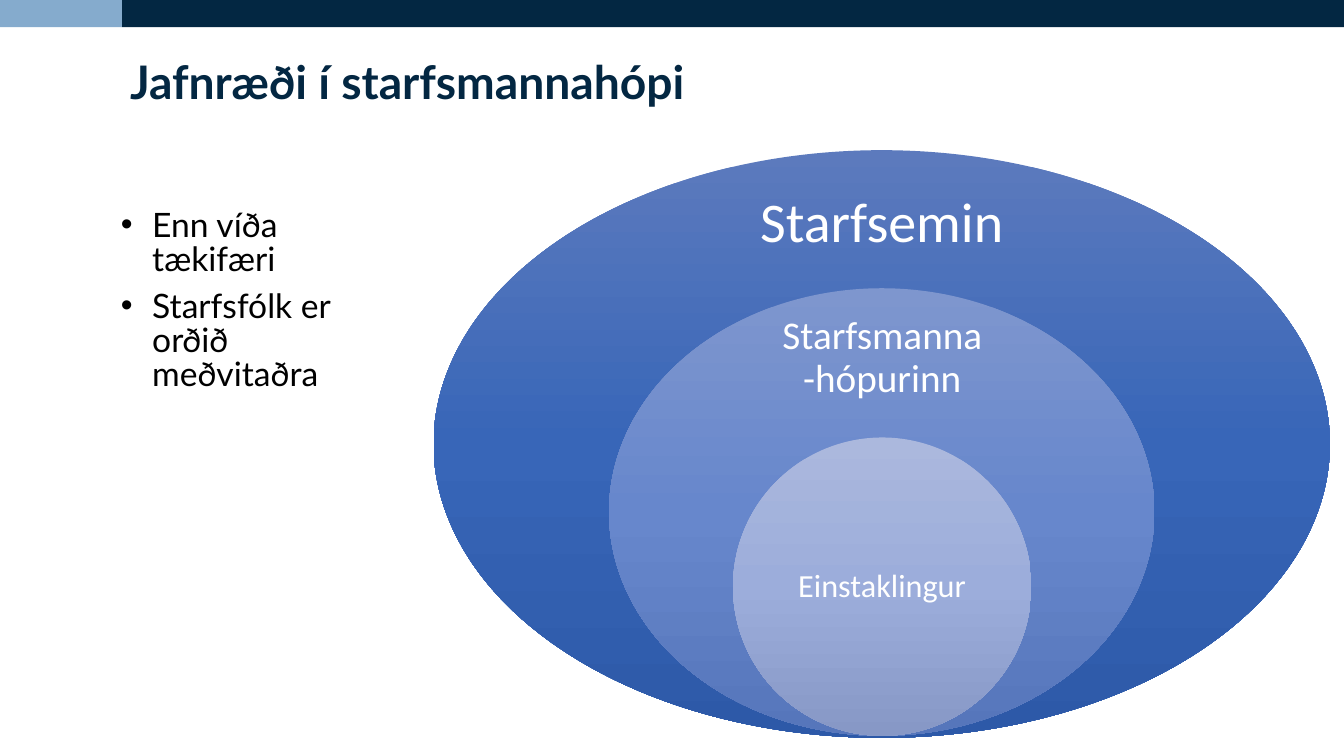
import copy

import pptx
import pptx.dml.color
import pptx.enum.shapes
import pptx.enum.text
import pptx.util

PX = 9144  # EMU per px, 100 px to the inch
SHAPE = pptx.enum.shapes.MSO_SHAPE
ANCHOR = pptx.enum.text.MSO_ANCHOR
ALIGN = pptx.enum.text.PP_ALIGN


def px(*lengths):
    """Turn px lengths into EMU."""
    return [length * PX for length in lengths]


def rgb(value):
    return pptx.dml.color.RGBColor.from_string(value)


deck = pptx.Presentation()
deck.slide_width, deck.slide_height = px(1333, 750)
page = deck.slides.add_slide(deck.slide_layouts[1])

# Top band
for left, width, color in [(121, 1212, "032742"), (0, 121, "85ABCD")]:
    band = page.shapes.add_shape(SHAPE.RECTANGLE, *px(left, 0, width, 27))
    band.shadow.inherit = False
    band.fill.solid()
    band.fill.fore_color.rgb = rgb(color)
    band.line.fill.background()

# Title
title = page.shapes.title
title.left, title.top, title.width, title.height = px(119, 54, 1083, 86)
title.text_frame.vertical_anchor = ANCHOR.TOP
title.text_frame.auto_size = pptx.enum.text.MSO_AUTO_SIZE.NONE
para = title.text_frame.paragraphs[0]
para.text = "Jafnræði í starfsmannahópi"
para.alignment = ALIGN.LEFT
para.line_spacing = 0.9
para.font.name = "Lato"
para.font.size = pptx.util.Pt(33)
para.font.bold = True
para.font.color.rgb = rgb("032742")

# Bullet list
body = page.placeholders[1]
body.left, body.top, body.width, body.height = px(110, 204, 297, 502)
body.text_frame.auto_size = pptx.enum.text.MSO_AUTO_SIZE.NONE
body.text_frame.text = "Enn víða tækifæri\nStarfsfólk er orðið meðvitaðra"
for para in body.text_frame.paragraphs:
    para.line_spacing = pptx.util.Pt(24)
    para.space_before = pptx.util.Pt(10)
    para.font.name = "Lato"
    para.font.size = pptx.util.Pt(24)
    para.font.color.rgb = rgb("000000")
    properties = para._p.get_or_add_pPr()
    properties.set("marL", str(31 * PX))
    properties.set("indent", str(-31 * PX))

# Nested ellipses: text, size, inset, ellipse place, label place, gradient
rings = [
    ("Starfsemin", 40, 31, (430, 149, 889, 583), (719, 179, 311, 88),
     ("5C7ABD", "3866B8", "2D59A8")),
    ("Starfsmanna-hópurinn", 28, 22, (604, 286, 541, 444), (749, 314, 252, 83),
     ("7E96CE", "6787CC", "5676BB")),
    ("Einstaklingur", 23, 18, (727, 434, 296, 296), (770, 508, 210, 148),
     ("ABB8DD", "9CADDB", "8798C6")),
]
for text, size, inset, ellipse_place, label_place, colors in rings:
    ellipse = page.shapes.add_shape(SHAPE.OVAL, *px(*ellipse_place))
    ellipse.shadow.inherit = False
    ellipse.line.fill.background()
    ellipse.fill.gradient()
    ellipse.fill.gradient_angle = 270
    first_stop = ellipse._element.spPr.xpath(".//a:gs")[0]
    first_stop.addnext(copy.deepcopy(first_stop))
    for stop, position, color in zip(ellipse.fill.gradient_stops, (0, 0.5, 1), colors):
        stop.position = position
        stop.color.rgb = rgb(color)

    box = page.shapes.add_textbox(*px(*label_place))
    frame = box.text_frame
    frame.word_wrap = True
    frame.vertical_anchor = ANCHOR.MIDDLE
    frame.margin_left, frame.margin_top, frame.margin_right, frame.margin_bottom = px(*[inset] * 4)
    para = frame.paragraphs[0]
    para.text = text
    para.alignment = ALIGN.CENTER
    para.line_spacing = 0.9
    para.font.name = "Calibri"
    para.font.size = pptx.util.Pt(size)
    para.font.color.rgb = rgb("FFFFFF")

deck.save("out.pptx")
